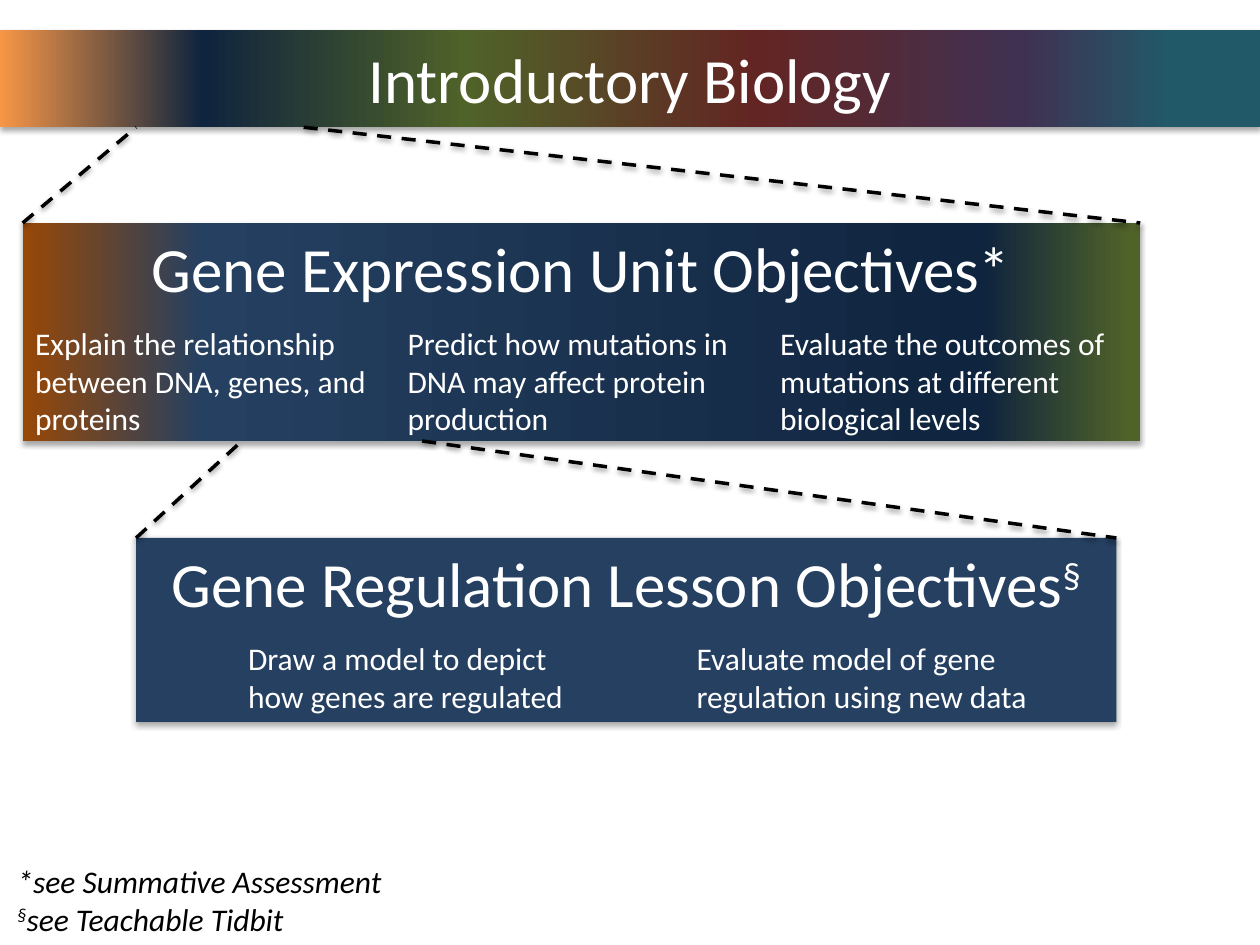
from lxml.etree import SubElement
from pptx import Presentation
from pptx.dml.color import RGBColor
from pptx.enum.dml import MSO_LINE
from pptx.enum.shapes import MSO_CONNECTOR, MSO_SHAPE
from pptx.enum.text import MSO_ANCHOR, MSO_AUTO_SIZE, PP_ALIGN
from pptx.oxml.ns import qn
from pptx.util import Inches, Pt

COLORS = {
    "white": "FFFFFF", "black": "000000", "orange": "F79646",
    "rust": "984807", "navy": "0F243E", "blue": "254061",
    "green": "4F6228", "red": "632523", "purple": "403152",
    "teal": "215968",
}

# Content: box, gradient stops (percent, colour) and text
COURSE = {
    "text": "Introductory Biology", "box": (0, 0.24, 10, 0.77),
    "stops": [(0, "orange"), (16, "navy"), (37, "green"),
              (60, "red"), (81, "purple"), (93, "teal")],
}
UNIT = {
    "text": "Gene Expression Unit Objectives*", "box": (0.18, 1.77, 8.87, 1.73),
    "stops": [(0, "rust"), (16, "blue"), (86, "navy"), (99, "green")],
}
LESSON = {
    "text": "Gene Regulation Lesson Objectives§", "box": (1.08, 4.27, 7.78, 1.46),
    "stops": [(0, "blue")],
}
GOALS = [
    "Explain the relationship between DNA, genes, and proteins",
    "Predict how mutations in DNA may affect protein production",
    "Evaluate the outcomes of mutations at different biological levels",
]
TASKS = [
    (1.87, 2.95, "Draw a model to depict how genes are regulated"),
    (5.43, 3.09, "Evaluate model of gene regulation using new data"),
]
NOTES = "*see Summative Assessment\n§see Teachable Tidbit"
# Zoom lines: upper band, lower band, left and right start on the upper band
ZOOMS = [(COURSE, UNIT, 1.08, 2.41), (UNIT, LESSON, 1.92, 3.35)]


def rgb(name):
    return RGBColor.from_string(COLORS[name])


def write(shape, text, size=18, color="white", align=PP_ALIGN.LEFT,
          anchor=MSO_ANCHOR.MIDDLE, italic=False, wrap=True):
    frame = shape.text_frame
    frame.word_wrap = wrap
    frame.auto_size = MSO_AUTO_SIZE.NONE
    frame.vertical_anchor = anchor
    for i, line in enumerate(text.split("\n")):
        para = frame.add_paragraph() if i else frame.paragraphs[0]
        para.alignment = align
        for part in filter(None, line.partition("§")):
            run = para.add_run()
            run.text = part
            font = run.font
            font.name, font.size, font.italic = "Calibri", Pt(size), italic
            font.color.rgb = rgb(color)
            if part == "§":
                font._element.set("baseline", "30000")


def shade(shape, alpha, dist):
    """Add a soft shadow that falls straight down."""
    effects = SubElement(shape._element.spPr, qn("a:effectLst"))
    outer = SubElement(effects, qn("a:outerShdw"), blurRad=str(Pt(3.1)),
                       dist=str(Pt(dist)), dir="5400000", rotWithShape="0")
    color = SubElement(outer, qn("a:srgbClr"), val=COLORS["black"])
    SubElement(color, qn("a:alpha"), val=str(alpha * 1000))


def paint(shape, stops):
    """Fill with one colour, or with a gradient from left to right."""
    if len(stops) == 1:
        shape.fill.solid()
        shape.fill.fore_color.rgb = rgb(stops[0][1])
        return
    shape.fill.gradient()
    shape.fill.gradient_angle = 0
    items = shape._element.spPr.find(qn("a:gradFill")).find(qn("a:gsLst"))
    for old in list(items):
        items.remove(old)
    for pos, name in stops:
        stop = SubElement(items, qn("a:gs"), pos=str(pos * 1000))
        SubElement(stop, qn("a:srgbClr"), val=COLORS[name])


def band(shape, data, anchor=MSO_ANCHOR.TOP):
    shape.left, shape.top, shape.width, shape.height = map(Inches, data["box"])
    paint(shape, data["stops"])
    shape.line.fill.background()
    shade(shape, 35, 1.8)
    write(shape, data["text"], size=36, align=PP_ALIGN.CENTER, anchor=anchor)


def label(slide, box, text, **style):
    write(slide.shapes.add_textbox(*map(Inches, box)), text, **style)


def dash(slide, start, end):
    line = slide.shapes.add_connector(
        MSO_CONNECTOR.STRAIGHT, *map(Inches, start + end))
    line.line.color.rgb = rgb("black")
    line.line.width = Pt(2)
    line.line.dash_style = MSO_LINE.DASH
    shade(line, 38, 1.6)


def main():
    deck = Presentation()
    deck.slide_width, deck.slide_height = Inches(10), Inches(7.5)
    slide = deck.slides.add_slide(deck.slide_layouts[5])

    # Course, unit and lesson bands
    band(slide.shapes.title, COURSE, anchor=MSO_ANCHOR.MIDDLE)
    for data in (UNIT, LESSON):
        box = map(Inches, data["box"])
        band(slide.shapes.add_shape(MSO_SHAPE.RECTANGLE, *box), data)

    # Dashed lines that open each band into the next
    for upper, lower, left, right in ZOOMS:
        base = upper["box"][1] + upper["box"][3]
        x, y, width, _ = lower["box"]
        dash(slide, (x, y), (left, base))
        dash(slide, (right, base), (x + width, y))

    # Unit objectives in equal columns, then lesson objectives
    x, _, width, _ = UNIT["box"]
    step = width / len(GOALS)
    for i, goal in enumerate(GOALS):
        label(slide, (x + i * step, 2.54, step, 0.96), goal)
    for left, wide, task in TASKS:
        label(slide, (left, 4.89, wide, 0.96), task)

    # Footnotes
    label(slide, (0.04, 6.79, 3.18, 0.71), NOTES, color="black",
          italic=True, wrap=False, anchor=MSO_ANCHOR.TOP)
    deck.save("out.pptx")


if __name__ == "__main__":
    main()
